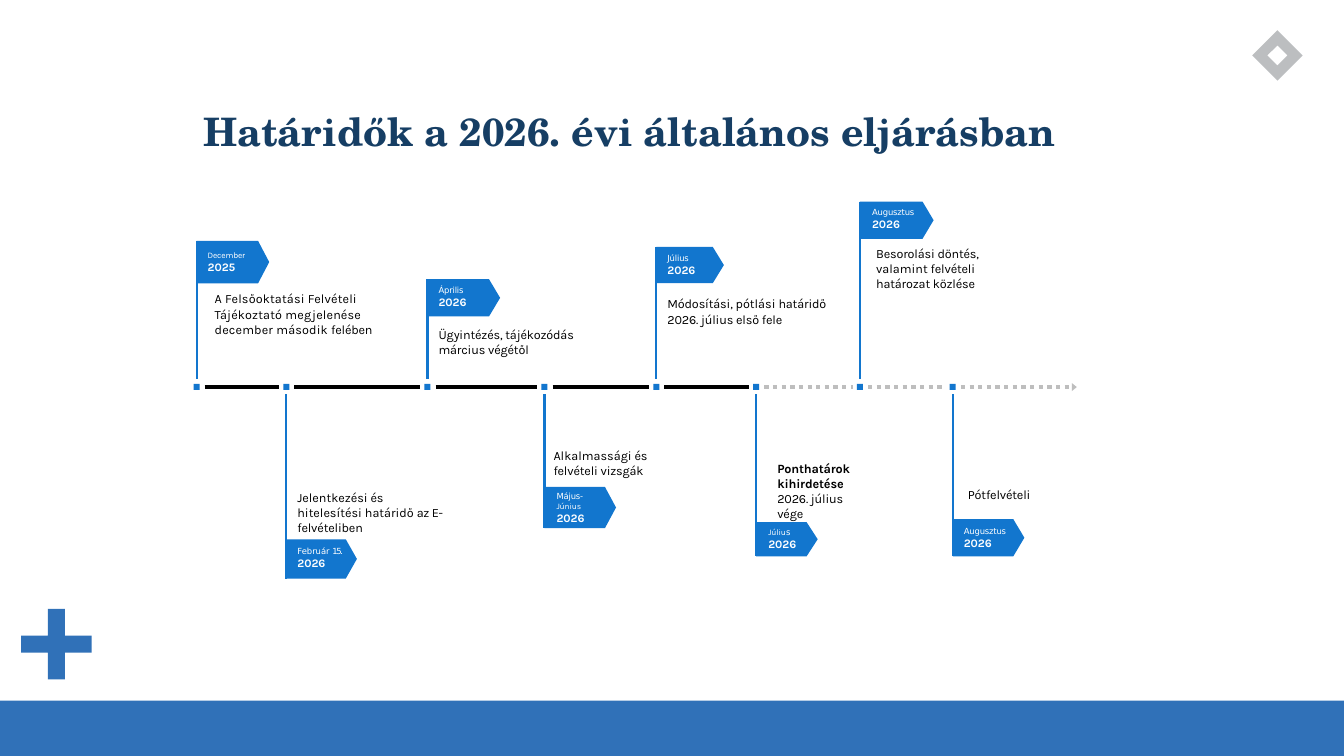
from dataclasses import dataclass
from itertools import pairwise

from lxml import etree
from pptx import Presentation
from pptx.dml.color import RGBColor
from pptx.enum.dml import MSO_LINE
from pptx.enum.shapes import MSO_CONNECTOR, MSO_SHAPE
from pptx.enum.text import MSO_ANCHOR, MSO_AUTO_SIZE, PP_ALIGN
from pptx.oxml.ns import qn
from pptx.shapes.autoshape import Shape
from pptx.slide import Slide
from pptx.util import Emu, Pt

PX = 9144  # EMU per px, 100 px to the inch
RECTANGLE, CROSS, PENTAGON = MSO_SHAPE.RECTANGLE, MSO_SHAPE.CROSS, MSO_SHAPE.PENTAGON
STRAIGHT = MSO_CONNECTOR.STRAIGHT
DOTTED = MSO_LINE.ROUND_DOT
TOP, MIDDLE = MSO_ANCHOR.TOP, MSO_ANCHOR.MIDDLE
CENTER = PP_ALIGN.CENTER
NO_AUTOFIT = MSO_AUTO_SIZE.NONE


@dataclass(frozen=True)
class Theme:
    band: str = "3071B8"
    ornament: str = "BCBEC0"
    flag: str = "1276CE"
    axis: str = "000000"
    axis_ahead: str = "BEBEBE"
    title: str = "163E64"
    ink: str = "000000"
    paper: str = "FFFFFF"
    title_font: str = "TeX Gyre Schola"
    body_font: str = "Karla"
    month_font: str = "DejaVu Sans"
    title_size: float = 28
    note_size: float = 9
    year_size: float = 8.2
    month_size: float = 6
    stem_width: float = 1.5
    axis_width: float = 3.1


THEME = Theme()


@dataclass(frozen=True)
class TextRun:
    text: str
    font: str = THEME.body_font
    size: float = THEME.note_size
    color: str = THEME.ink
    bold: bool = False
    spacing: int = -10  # hundredths of a point


@dataclass(frozen=True)
class Box:
    left: int
    top: int
    width: int
    height: int


@dataclass(frozen=True)
class Milestone:
    x: int
    flag: Box
    label: Box
    month: list[TextRun]
    year: str
    note: Box
    note_runs: list[TextRun]
    month_leading: float | None = 7.1


def month(text: str, font: str = THEME.month_font, spacing: int = -10) -> TextRun:
    return TextRun(text, font, THEME.month_size, THEME.paper, spacing=spacing)


AXIS_Y = 384
AXIS_END = 1065
DONE_SEGMENTS = 5
MARKER = 6
FLAG_TIP = 11

MILESTONES = [
    Milestone(195, Box(195, 239, 72, 42), Box(205, 247, 47, 24),
              [month("December", THEME.body_font)], "2025", Box(212, 288, 176, 78),
              [TextRun("A Felsőoktatási Felvételi Tájékoztató megjelenése december második ",
                       spacing=10), TextRun("felében")]),
    Milestone(284, Box(284, 535, 70, 39), Box(294, 541, 47, 24),
              [month("Február ", spacing=0), month("15.", spacing=-90)], "2026",
              Box(294, 485, 146, 31),
              [TextRun("Jelentkezési ", spacing=0), TextRun("és ", spacing=-20),
               TextRun("hitelesítési határidő ", spacing=0), TextRun("az E-", spacing=-20),
               TextRun("felvételiben")]),
    Milestone(424, Box(424, 277, 72, 37), Box(434, 282, 31, 24),
              [month("Április")], "2026", Box(434, 323, 140, 31),
              [TextRun("Ügyintézés, tájékozódás március végétől")]),
    Milestone(540, Box(540, 483, 71, 41), Box(551, 486, 31, 34),
              [month("Május- "), month("Június", THEME.body_font)], "2026",
              Box(548, 443, 98, 31),
              [TextRun("Alkalmassági ", spacing=0), TextRun("és ", spacing=-20),
               TextRun("felvételi vizsgák")], month_leading=None),
    Milestone(651, Box(651, 245, 67, 36), Box(661, 250, 31, 24),
              [month("Július")], "2026", Box(661, 293, 159, 31),
              [TextRun("Módosítási, "), TextRun("pótlási ", spacing=0),
               TextRun("határidő 2026. július első fele")]),
    Milestone(750, Box(750, 518, 61, 34), Box(761, 522, 31, 24),
              [month("Júliu", THEME.body_font), month("s")], "2026",
              Box(770, 456, 90, 46),
              [TextRun("Ponthatárok kihirdetése ", bold=True),
               TextRun("2026. július vége")]),
    Milestone(853, Box(853, 200, 73, 37), Box(864, 205, 47, 24),
              [month("Augusztus")], "2026", Box(868, 243, 106, 47),
              [TextRun("Besorolási döntés, "), TextRun("valamint ", spacing=0),
               TextRun("felvételi határozat közlése")]),
    Milestone(945, Box(945, 515, 71, 37), Box(955, 521, 47, 24),
              [month("Augusztus")], "2026", Box(959, 482, 67, 16),
              [TextRun("Pótfelvételi")]),
]


def emu(box: Box) -> tuple[Emu, ...]:
    return tuple(Emu(value * PX) for value in (box.left, box.top, box.width, box.height))


def paint(shape: Shape, color: str) -> None:
    shape.shadow.inherit = False
    shape.fill.solid()
    shape.fill.fore_color.rgb = RGBColor.from_string(color)
    shape.line.fill.background()


def add_preset(slide: Slide, kind: MSO_SHAPE, box: Box, color: str) -> Shape:
    shape = slide.shapes.add_shape(kind, *emu(box))
    paint(shape, color)
    return shape


def add_outline(slide: Slide, contours: list[list[tuple[int, int]]], color: str) -> None:
    builder = slide.shapes.build_freeform(*contours[0][0], scale=PX)
    builder.add_line_segments(contours[0][1:])
    for contour in contours[1:]:
        builder.move_to(*contour[0])
        builder.add_line_segments(contour[1:])
    paint(builder.convert_to_shape(), color)


def add_line(slide: Slide, start: tuple[int, int], end: tuple[int, int],
             color: str, width: float, dotted: bool = False) -> None:
    connector = slide.shapes.add_connector(
        STRAIGHT, *(Emu(value * PX) for value in (*start, *end)))
    connector.line.color.rgb = RGBColor.from_string(color)
    connector.line.width = Pt(width)
    if dotted:
        connector.line.dash_style = DOTTED
    etree.SubElement(connector._element.spPr, qn("a:effectLst"))


def add_runs(paragraph, runs: list[TextRun], leading: float | None = None) -> None:
    if leading:
        paragraph.line_spacing = Pt(leading)
    for text_run in runs:
        run = paragraph.add_run()
        run.text = text_run.text
        run.font.name = text_run.font
        run.font.size = Pt(text_run.size)
        run.font.bold = text_run.bold
        run.font.color.rgb = RGBColor.from_string(text_run.color)
        run._r.get_or_add_rPr().set("spc", str(text_run.spacing))


def add_text(slide: Slide, box: Box, lines: list[tuple[list[TextRun], float | None]]) -> None:
    frame = slide.shapes.add_textbox(*emu(box)).text_frame
    frame.word_wrap = True
    frame.vertical_anchor = TOP
    frame.margin_left = frame.margin_top = Emu(PX)
    frame.margin_right = frame.margin_bottom = 0
    for index, (runs, leading) in enumerate(lines):
        paragraph = frame.add_paragraph() if index else frame.paragraphs[0]
        add_runs(paragraph, runs, leading)


def diamond(x: int, y: int, radius: int) -> list[tuple[int, int]]:
    return [(x - radius, y), (x, y - radius), (x + radius, y), (x, y + radius), (x - radius, y)]


def add_decoration(slide: Slide) -> None:
    add_preset(slide, RECTANGLE, Box(0, 695, 1333, 55), THEME.band)
    plus = add_preset(slide, CROSS, Box(21, 604, 70, 70), THEME.band)
    plus.adjustments[0] = 0.38
    add_outline(slide, [diamond(1267, 55, 10), diamond(1267, 55, 25)[::-1]], THEME.ornament)


def add_axis(slide: Slide) -> None:
    stops = [milestone.x for milestone in MILESTONES] + [AXIS_END + 7]
    for index, (start, end) in enumerate(pairwise(stops)):
        ahead = index >= DONE_SEGMENTS
        add_line(slide, (start + 8, AXIS_Y), (end - 7, AXIS_Y),
                 THEME.axis_ahead if ahead else THEME.axis, THEME.axis_width, ahead)
    add_outline(slide, [[(1063, 380), (1063, 388), (1068, AXIS_Y), (1063, 380)]],
                THEME.axis_ahead)


def add_milestone(slide: Slide, milestone: Milestone) -> None:
    x, flag = milestone.x, milestone.flag
    above = flag.top < AXIS_Y
    stem_end = flag.top if above else flag.top + flag.height
    add_line(slide, (x, AXIS_Y + (-8 if above else 7)), (x, stem_end),
             THEME.flag, THEME.stem_width)
    pennant = add_preset(slide, PENTAGON, flag, THEME.flag)
    pennant.adjustments[0] = FLAG_TIP / flag.height
    add_preset(slide, RECTANGLE,
               Box(x - MARKER // 2, AXIS_Y - MARKER // 2, MARKER, MARKER), THEME.flag)
    year = TextRun(milestone.year, size=THEME.year_size, color=THEME.paper,
                   bold=True, spacing=0)
    add_text(slide, milestone.label,
             [(milestone.month, milestone.month_leading), ([year], 9.8)])
    add_text(slide, milestone.note, [(milestone.note_runs, None)])


def add_title(slide: Slide) -> None:
    title = slide.shapes.title
    title.left, title.top, title.width, title.height = emu(Box(128, 101, 992, 57))
    frame = title.text_frame
    frame.word_wrap = True
    frame.auto_size = NO_AUTOFIT
    frame.vertical_anchor = MIDDLE
    frame.paragraphs[0].alignment = CENTER
    add_runs(frame.paragraphs[0], [TextRun(
        "Határidők a 2026. évi általános eljárásban", THEME.title_font,
        THEME.title_size, THEME.title, bold=True, spacing=0)])


def main() -> None:
    presentation = Presentation()
    presentation.slide_width, presentation.slide_height = Emu(1333 * PX), Emu(750 * PX)
    slide = presentation.slides.add_slide(presentation.slide_layouts[5])
    add_decoration(slide)
    add_axis(slide)
    for milestone in MILESTONES:
        add_milestone(slide, milestone)
    add_title(slide)
    presentation.save("out.pptx")


if __name__ == "__main__":
    main()
